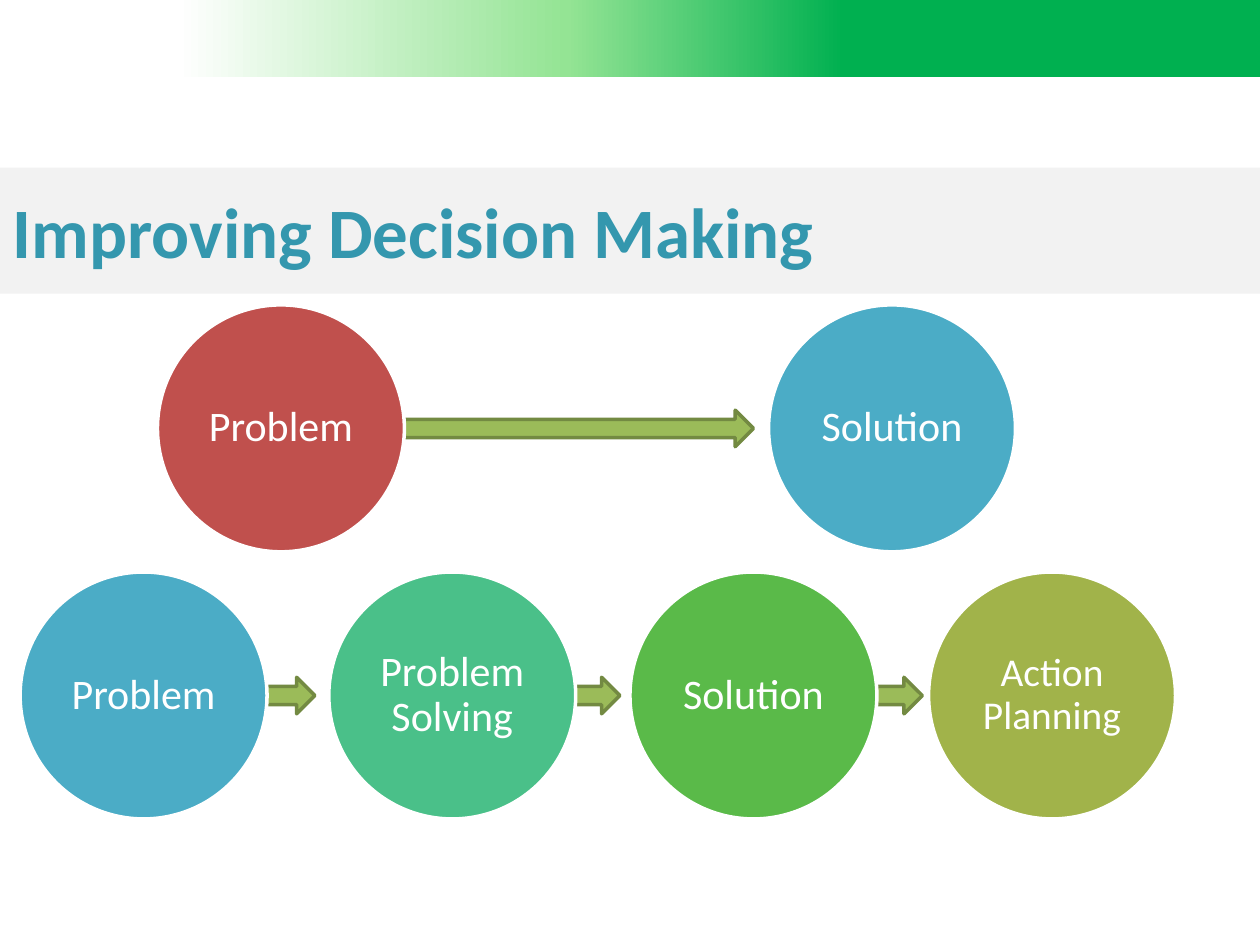
from pptx import Presentation, util as u
from pptx.dml.color import RGBColor
from pptx.enum import shapes, text
from pptx.oxml import parse_xml
from pptx.oxml.ns import nsdecls

GREEN = RGBColor(0x00, 0xB0, 0x50)
PALE_GREEN = RGBColor(0x94, 0xE4, 0x94)
WHITE = RGBColor(0xFF, 0xFF, 0xFF)
GREY = RGBColor(0xF2, 0xF2, 0xF2)
TITLE_BLUE = RGBColor(0x34, 0x97, 0xAE)
RED = RGBColor(0xC0, 0x50, 0x4D)
BLUE = RGBColor(0x4B, 0xAC, 0xC6)
TEAL = RGBColor(0x4A, 0xC0, 0x89)
LEAF = RGBColor(0x5A, 0xBA, 0x49)
OLIVE = RGBColor(0xA1, 0xB3, 0x4A)
ARROW_FILL = RGBColor(0x9B, 0xBB, 0x59)
ARROW_LINE = RGBColor(0x73, 0x8A, 0x42)

# The page is a grid of 100 columns and 75 rows
CELL = u.Inches(0.1)
COLUMNS, ROWS = 100, 75
DIAMETER, ARROW_HEIGHT = 19.6, 2.9

# Each flow: middle row, circles (left column, label, colour, size),
# arrows (left column, columns wide)
FLOWS = [
    (34, [(12.5, "Problem", RED, 24), (61, "Solution", BLUE, 24)],
     [(30, 29.8)]),
    (55.2, [(1.6, "Problem", BLUE, 24), (26.1, "Problem Solving", TEAL, 24),
            (50, "Solution", LEAF, 24), (73.7, "Action Planning", OLIVE, 22.5)],
     [(19.7, 5.3), (43.9, 5.3), (67.9, 5.3)]),
]


def grid(*cells):
    return [round(cell * CELL) for cell in cells]


def set_all(target, values):
    for name, value in values.items():
        setattr(target, name, value)


def add_shape(page, kind, place, fill, line=None):
    shape = page.shapes.add_shape(kind, *grid(*place))
    shape.shadow.inherit = False
    shape.fill.solid()
    shape.fill.fore_color.rgb = fill
    if line is None:
        shape.line.fill.background()
    else:
        shape.line.color.rgb = line
        shape.line.width = u.Pt(2)
    return shape


def write(shape, words, frame_format, para_format, font_format, colour):
    frame = shape.text_frame
    set_all(frame, {"word_wrap": True, "auto_size": text.MSO_AUTO_SIZE.NONE,
                    "vertical_anchor": text.MSO_ANCHOR.MIDDLE, **frame_format})
    para = frame.paragraphs[0]
    set_all(para, para_format)
    span = para.add_run()
    span.text = words
    set_all(span.font, {"name": "Calibri", **font_format})
    span.font.color.rgb = colour


def add_banner(page):
    banner = add_shape(page, shapes.MSO_SHAPE.RECTANGLE,
                       (0, 0, COLUMNS, 6.1), GREEN)
    banner.fill.gradient()
    banner.fill.gradient_angle = 0
    # Three stops need their own XML
    stops = banner.element.spPr.find(".//{*}gsLst")
    for stop in list(stops):
        stops.remove(stop)
    for percent, colour in [(14, WHITE), (45, PALE_GREEN), (67, GREEN)]:
        stops.append(parse_xml(
            f'<a:gs {nsdecls("a")} pos="{percent * 1000}">'
            f'<a:srgbClr val="{colour}"/></a:gs>'))


def add_title(page, words):
    title = page.shapes.title
    place = grid(0, 13.3, COLUMNS, 10)
    set_all(title, dict(zip(("left", "top", "width", "height"), place)))
    title.fill.solid()
    title.fill.fore_color.rgb = GREY
    write(title, words, {}, {"alignment": text.PP_ALIGN.LEFT},
          {"size": u.Pt(40.5), "bold": True}, TITLE_BLUE)


def add_arrow(page, left, width, middle):
    add_shape(page, shapes.MSO_SHAPE.RIGHT_ARROW,
              (left, middle - ARROW_HEIGHT / 2, width, ARROW_HEIGHT),
              ARROW_FILL, ARROW_LINE)


def add_circle(page, left, middle, words, colour, size):
    circle = add_shape(page, shapes.MSO_SHAPE.OVAL,
                       (left, middle - DIAMETER / 2, DIAMETER, DIAMETER),
                       colour, WHITE)
    side, edge = grid(1, 0.3)
    write(circle, words,
          {"margin_left": side, "margin_right": side,
           "margin_top": edge, "margin_bottom": edge},
          {"alignment": text.PP_ALIGN.CENTER, "line_spacing": 0.9},
          {"size": u.Pt(size)}, WHITE)


def main():
    deck = Presentation()
    deck.slide_width, deck.slide_height = grid(COLUMNS, ROWS)
    page = deck.slides.add_slide(deck.slide_layouts.get_by_name("Title Only"))

    # Header
    add_banner(page)
    add_title(page, "Improving Decision Making")

    # Flows: arrows lie behind the circles
    for middle, circles, arrows in FLOWS:
        for left, width in arrows:
            add_arrow(page, left, width, middle)
        for left, words, colour, size in circles:
            add_circle(page, left, middle, words, colour, size)

    deck.save("out.pptx")


if __name__ == "__main__":
    main()
